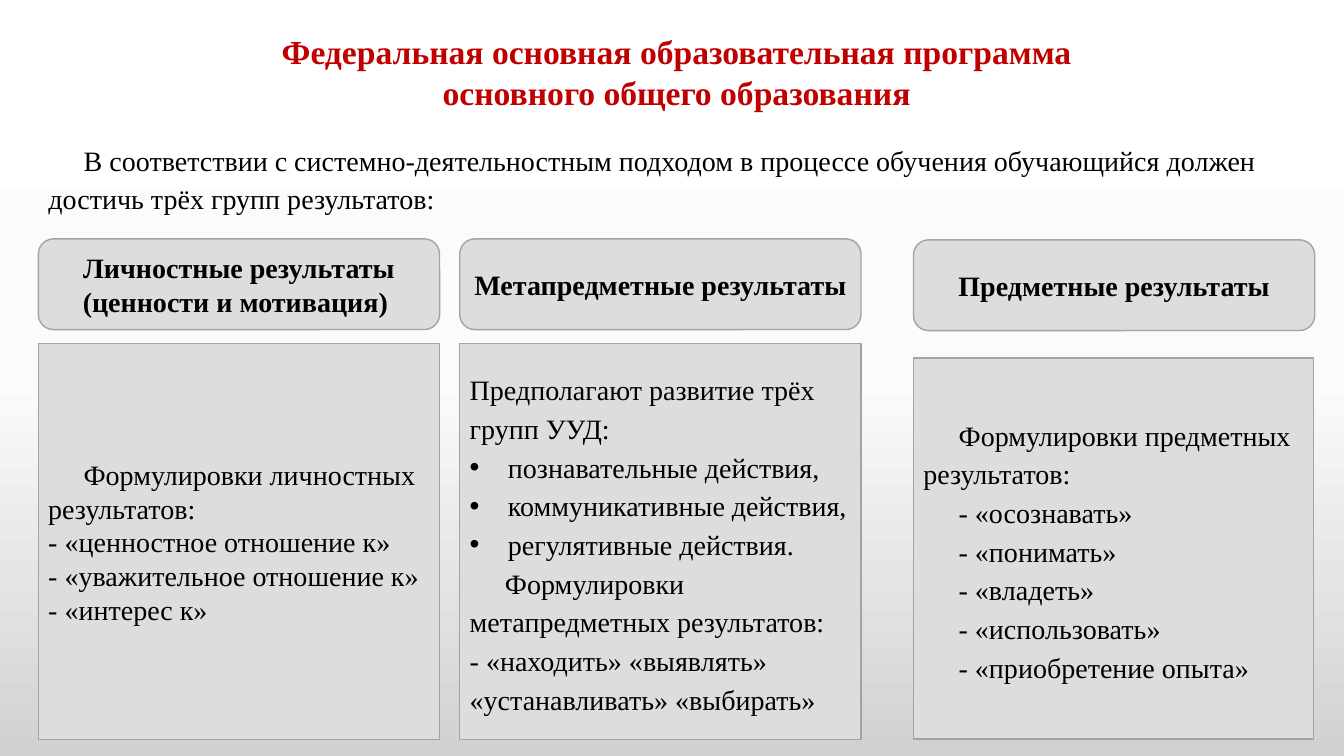
import copy

import pptx
import pptx.dml.color
import pptx.enum.shapes
import pptx.enum.text
import pptx.oxml
import pptx.oxml.ns
import pptx.util

Inches, Pt = pptx.util.Inches, pptx.util.Pt
SHAPES = pptx.enum.shapes.MSO_SHAPE
ANCHOR = pptx.enum.text.MSO_ANCHOR
CENTER, LEFT = pptx.enum.text.PP_ALIGN.CENTER, pptx.enum.text.PP_ALIGN.LEFT

FONT, RED, BLACK, PANEL, BORDER = "Times New Roman", "C00000", "000000", "DDDDDD", "A3A3A3"
BACKGROUND = [(0, "FFFFFF"), (0.5, "FBFBFB"), (1, "D1D1D1")]

TITLE = ["Федеральная основная образовательная программа", "основного общего образования"]
INTRO = ("В соответствии с системно-деятельностным подходом в процессе обучения "
         "обучающийся должен достичь трёх групп результатов:")

# Paragraph kinds: left margin and first-line indent in inches
INDENTS = {"plain": (0, 0), "first": (0, 0.35), "bullet": (0.38, -0.38)}

COLUMNS = [
    {"heading": "Личностные результаты (ценности и мотивация) ",
     "left": 0.38, "heading_top": 2.37, "panel": (3.41, 3.98, 3.93), "spacing": 1.0,
     "body": [("first", "Формулировки личностных результатов:"),
              ("plain", "- «ценностное отношение к»"),
              ("plain", "- «уважительное отношение к»"),
              ("plain", "- «интерес к»")]},
    {"heading": "Метапредметные результаты",
     "left": 4.56, "heading_top": 2.37, "panel": (3.41, 3.98, 3.93), "spacing": 1.15,
     "body": [("plain", "Предполагают развитие трёх групп УУД:"),
              ("bullet", "познавательные действия,"),
              ("bullet", "коммуникативные действия,"),
              ("bullet", "регулятивные действия."),
              ("first", "Формулировки метапредметных результатов:"),
              ("plain", "- «находить» «выявлять» «устанавливать» «выбирать»")]},
    {"heading": "Предметные результаты",
     "left": 9.06, "heading_top": 2.38, "panel": (3.55, 3.97, 3.78), "spacing": 1.15,
     "body": [("first", "Формулировки предметных результатов:"),
              ("first", "- «осознавать»"),
              ("first", "- «понимать»"),
              ("first", "- «владеть»"),
              ("first", "- «использовать»"),
              ("first", "- «приобретение опыта»")]},
]
HEADING_SIZE = (3.98, 0.9)


def color(value):
    return pptx.dml.color.RGBColor.from_string(value)


def set_indent(paragraph, kind):
    """Set the margins of a paragraph and turn its bullet on or off."""
    properties = paragraph._p.get_or_add_pPr()
    margin, indent = INDENTS[kind]
    properties.set("marL", str(Inches(margin)))
    properties.set("indent", str(Inches(indent)))
    namespace = pptx.oxml.ns.nsdecls("a")
    if kind == "bullet":
        properties.append(pptx.oxml.parse_xml(f'<a:buFont {namespace} typeface="Arial"/>'))
        properties.append(pptx.oxml.parse_xml(f'<a:buChar {namespace} char="•"/>'))
    else:
        properties.append(pptx.oxml.parse_xml(f"<a:buNone {namespace}/>"))


def write(shape, lines, size=20, ink=BLACK, bold=False, align=LEFT, spacing=1.0,
          anchor=ANCHOR.MIDDLE):
    """Fill a shape with (kind, text) paragraphs."""
    frame = shape.text_frame
    frame.word_wrap = True
    frame.auto_size = pptx.enum.text.MSO_AUTO_SIZE.NONE
    frame.vertical_anchor = anchor
    for number, (kind, text) in enumerate(lines):
        paragraph = frame.add_paragraph() if number else frame.paragraphs[0]
        paragraph.alignment = align
        paragraph.line_spacing = spacing
        paragraph.space_before = Pt(0)
        set_indent(paragraph, kind)
        run = paragraph.add_run()
        run.text = text
        run.font.name, run.font.size, run.font.bold = FONT, Pt(size), bold
        run.font.color.rgb = color(ink)


def place(shape, left, top, width, height):
    shape.left, shape.top = Inches(left), Inches(top)
    shape.width, shape.height = Inches(width), Inches(height)


def add_panel(slide, preset, left, top, width, height):
    shape = slide.shapes.add_shape(
        preset, Inches(left), Inches(top), Inches(width), Inches(height))
    shape.shadow.inherit = False
    shape.fill.solid()
    shape.fill.fore_color.rgb = color(PANEL)
    shape.line.color.rgb = color(BORDER)
    shape.line.width = Pt(1)
    return shape


def paint_background(slide):
    fill = slide.background.fill
    fill.gradient()
    fill.gradient_angle = 270
    stop_list = slide.element.find(".//" + pptx.oxml.ns.qn("a:gsLst"))
    stop_list.append(copy.deepcopy(stop_list[-1]))
    for stop, (position, value) in zip(fill.gradient_stops, BACKGROUND):
        stop.position = position
        stop.color.rgb = color(value)


def main():
    presentation = pptx.Presentation()
    presentation.slide_width, presentation.slide_height = Inches(13.33), Inches(7.5)
    slide = presentation.slides.add_slide(presentation.slide_layouts[1])
    paint_background(slide)

    title, intro = slide.placeholders
    place(title, 0.38, 0.26, 12.66, 0.91)
    write(title, [("plain", line) for line in TITLE], 24, RED, True, CENTER,
          anchor=ANCHOR.TOP)
    place(intro, 0.38, 1.32, 12.57, 0.88)
    write(intro, [("first", INTRO)], spacing=1.15, anchor=ANCHOR.TOP)

    for column in COLUMNS:
        heading = add_panel(slide, SHAPES.ROUNDED_RECTANGLE, column["left"],
                            column["heading_top"], *HEADING_SIZE)
        write(heading, [("plain", column["heading"])], bold=True, align=CENTER)
        top, width, height = column["panel"]
        panel = add_panel(slide, SHAPES.RECTANGLE, column["left"], top, width, height)
        write(panel, column["body"], spacing=column["spacing"])

    presentation.save("out.pptx")


if __name__ == "__main__":
    main()
